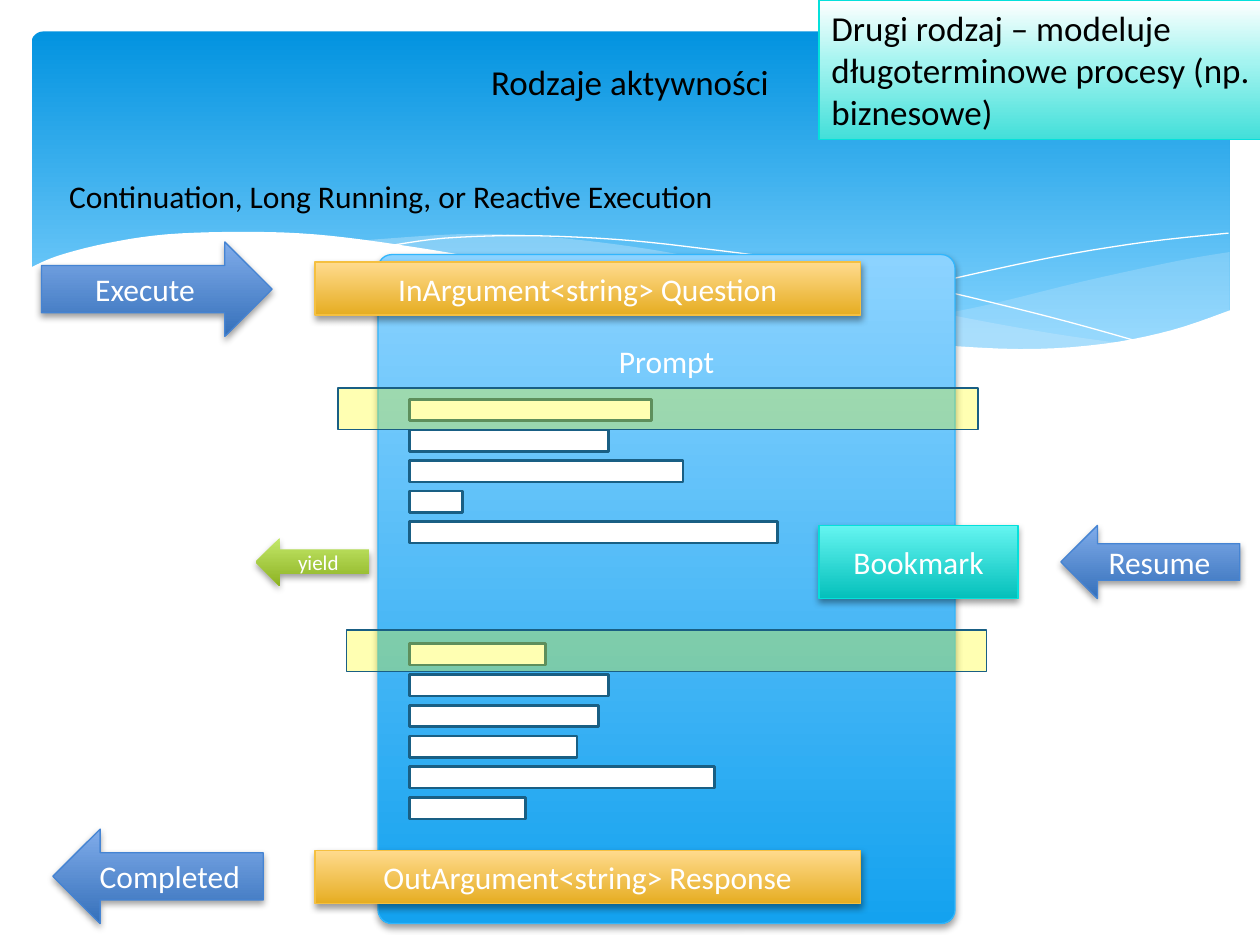
from copy import deepcopy

from lxml import etree
from pptx import Presentation
from pptx import util as u
from pptx.dml.color import RGBColor
from pptx.enum import shapes, text
from pptx.oxml.ns import qn

BLACK = RGBColor(0, 0, 0)
WHITE = RGBColor(255, 255, 255)
YELLOW = RGBColor(255, 255, 0)
NAVY = RGBColor(0x19, 0x5F, 0x84)
PALE = RGBColor(0xC6, 0xE7, 0xFC)


def ramp(*stops):
    return [(share, RGBColor.from_string(color)) for share, color in stops]


SKY = ramp((0, "0293E0"), (0.9, "83D3FE"))
PANEL = ramp((0, "8CD3FF"), (1, "14A2EF")), RGBColor(0x31, 0xB6, 0xFD)
GOLD = ramp((0, "FFDB8E"), (1, "E6AD22")), RGBColor(0xF5, 0xC0, 0x40)
BLUE = ramp((0, "80ACEA"), (1, "3570BA")), RGBColor(0x45, 0x84, 0xD3)
TEAL = ramp((0, "65F5F1"), (1, "04C0BB")), RGBColor(0x05, 0xE0, 0xDB)
GREEN = ramp((0, "C3E86A"), (1, "8DB222")), None
MINT = ramp((0, "FFFFFF"), (0.44, "A5F4F0"), (1, "42DFD9")), RGBColor(0x05, 0xE0, 0xDB)

RECT = shapes.MSO_SHAPE.RECTANGLE
ROUND = shapes.MSO_SHAPE.ROUNDED_RECTANGLE
ARROW = shapes.MSO_SHAPE.RIGHT_ARROW

TITLE = "Rodzaje aktywności"
SUBTITLE = "Continuation, Long Running, or Reactive Execution"
NOTE = "Drugi rodzaj – modeluje długoterminowe procesy (np. biznesowe)"

ARGUMENTS = [("InArgument<string> Question", 2.08), ("OutArgument<string> Response", 6.75)]
CODE_BLOCKS = [
    (3.17, 4.14, [1.92, 1.58, 2.17, 0.42, 2.92]),
    (5.11, 6.33, [1.08, 1.58, 1.5, 1.33, 2.42, 0.92]),
]
HIGHLIGHTS = [(2.68, 3.08), (2.75, 5)]
STEPS = [
    ("Execute", (0.33, 1.92, 1.83, 0.75), ARROW, False, BLUE, 18),
    ("Completed", (0.42, 6.58, 1.67, 0.75), ARROW, True, BLUE, 18),
    ("Bookmark", (6.5, 4.17, 1.58, 0.58), RECT, False, TEAL, 18),
    ("Resume", (8.42, 4.17, 1.42, 0.58), ARROW, True, BLUE, 18),
    ("yield", (2.03, 4.27, 0.9, 0.38), ARROW, True, GREEN, 12),
]

WAVES = [
    ([[(9.76, 2), (9.35, 2.07), (8.61, 2.23), (7.79, 2.43), (7.06, 2.57), (6.61, 2.65)],
      [(6.61, 2.65), (7.05, 2.71), (7.57, 2.76), (8.14, 2.78), (8.63, 2.75),
       (9.13, 2.67), (9.49, 2.57), (9.76, 2.47)]], PALE, 29),
    ([[(8.93, 2.73), (8.37, 2.65), (7.75, 2.54), (7.06, 2.4), (6.29, 2.22), (5.55, 2.05),
       (4.89, 1.94), (4.2, 1.87), (3.61, 1.86), (2.86, 1.91)],
      [(2.86, 1.91), (3.42, 1.99), (4.04, 2.11), (4.91, 2.32), (5.66, 2.48), (6.34, 2.61),
       (6.95, 2.7), (7.61, 2.77), (8.18, 2.79), (8.57, 2.77), (8.93, 2.73)]], PALE, 40),
    ([[(3.09, 1.95), (3.53, 1.89), (4.16, 1.87), (4.89, 1.9), (5.56, 1.97), (6.36, 2.08),
       (7.27, 2.26), (8.31, 2.51), (9.07, 2.72)]], None, 100),
    ([[(6.13, 2.57), (6.72, 2.41), (7.48, 2.23), (8.36, 2.04), (9.1, 1.92), (9.75, 1.85)]],
     None, 100),
    ([[(9.77, 2.46), (9.3, 2.62), (8.75, 2.73), (8.09, 2.77), (7.26, 2.72), (6.47, 2.62),
       (5.55, 2.45), (4.75, 2.27), (3.91, 2.07), (3.15, 1.94), (2.5, 1.86), (1.93, 1.84),
       (1.32, 1.86), (0.85, 1.93), (0.46, 2.03), (0.23, 2.13)],
      [(0.23, 3.29), (9.77, 3.29)]], WHITE, 100),
]


def smooth_points(knots, steps=5):
    if len(knots) < 3:
        return knots
    padded = [knots[0], *knots, knots[-1]]
    points = []
    for a, b, c, d in zip(padded, padded[1:], padded[2:], padded[3:]):
        for t in (i / steps for i in range(steps)):
            points.append(tuple(
                q + t / 2 * (r - p + t * (2 * p - 5 * q + 4 * r - s + t * (3 * (q - r) + s - p)))
                for p, q, r, s in zip(a, b, c, d)))
    return points + [knots[-1]]


def set_alpha(shape, percent):
    color = shape.fill._xPr.find(qn("a:solidFill"))[0]
    etree.SubElement(color, qn("a:alpha"), val=str(percent * 1000))


def paint(shape, fill, line=None, width=0.75):
    shape.shadow.inherit = False
    if isinstance(fill, list):
        shape.fill.gradient()
        shape.fill.gradient_angle = 270
        stop_list = shape._element.spPr.find(".//" + qn("a:gsLst"))
        for _ in fill[2:]:
            stop_list.append(deepcopy(stop_list[0]))
        for stop, (share, color) in zip(shape.fill.gradient_stops, fill):
            stop.position, stop.color.rgb = share, color
    elif fill is None:
        shape.fill.background()
    else:
        shape.fill.solid()
        shape.fill.fore_color.rgb = fill
    if line is None:
        shape.line.fill.background()
    else:
        shape.line.color.rgb = line
        shape.line.width = u.Pt(width)


def cast_shadow(shape):
    effects = shape._element.spPr.find(qn("a:effectLst"))
    outer = etree.SubElement(effects, qn("a:outerShdw"), blurRad=str(u.Pt(4)),
                             dist=str(u.Pt(2)), dir="5400000", rotWithShape="0")
    color = etree.SubElement(outer, qn("a:srgbClr"), val="000000")
    etree.SubElement(color, qn("a:alpha"), val="38000")


def write(shape, words, size, color, align, wrap=True):
    frame = shape.text_frame
    frame.text = words
    frame.word_wrap = wrap
    line = frame.paragraphs[0]
    line.alignment = align
    line.font.name, line.font.size, line.font.color.rgb = "Calibri", u.Pt(size), color
    return frame


def add_block(slide, kind, box, fill, line=None, width=0.75):
    block = slide.shapes.add_shape(kind, *map(u.Inches, box))
    paint(block, fill, line, width)
    return block


def add_wave(slide, curves, fill, alpha):
    points = [(u.Inches(x), u.Inches(y)) for knots in curves for x, y in smooth_points(knots)]
    outline = slide.shapes.build_freeform(*points[0])
    outline.add_line_segments(points[1:], close=fill is not None)
    wave = outline.convert_to_shape()
    paint(wave, fill, None if fill else WHITE, 0)
    if alpha < 100:
        set_alpha(wave, alpha)


def add_label(slide, words, box, kind, style, size=18):
    label = add_block(slide, kind, box, *style)
    cast_shadow(label)
    write(label, words, size, WHITE, text.PP_ALIGN.CENTER)
    return label


def main():
    deck = Presentation()
    deck.slide_width, deck.slide_height = u.Inches(10), u.Inches(7.5)
    slide = deck.slides.add_slide(deck.slide_layouts[5])

    sky = add_block(slide, ROUND, (0.25, 0.25, 9.51, 2.7), SKY)
    sky.adjustments[0] = 0.034
    for wave in WAVES:
        add_wave(slide, *wave)

    title = slide.shapes.title
    title.left, title.top, title.width, title.height = map(u.Inches, (0.5, 0.37, 9, 0.55))
    heading = write(title, TITLE, 20, BLACK, text.PP_ALIGN.CENTER)
    heading.vertical_anchor = text.MSO_ANCHOR.MIDDLE
    slide.shapes._spTree.append(title._element)

    prompt = add_label(slide, "Prompt", (3, 2.02, 4.58, 5.31), ROUND, PANEL)
    prompt.adjustments[0] = 0.024
    prompt.text_frame.vertical_anchor = text.MSO_ANCHOR.TOP
    prompt.text_frame.margin_top = u.Inches(0.66)

    for words, top in ARGUMENTS:
        add_label(slide, words, (2.5, top, 4.33, 0.42), RECT, GOLD)
    for first, last, widths in CODE_BLOCKS:
        pitch = (last - first) / (len(widths) - 1)
        for row, width in enumerate(widths):
            add_block(slide, RECT, (3.25, first + row * pitch, width, 0.17), WHITE, NAVY, 1.5)
    for left, top in HIGHLIGHTS:
        set_alpha(add_block(slide, RECT, (left, top, 5.08, 0.33), YELLOW, NAVY, 1), 30)
    for words, box, kind, flipped, style, size in STEPS:
        step = add_label(slide, words, box, kind, style, size)
        if flipped:
            step._element.spPr.find(qn("a:xfrm")).set("flipH", "1")

    subtitle = slide.shapes.add_textbox(*map(u.Inches, (0.45, 1.36, 5.38, 0.4)))
    write(subtitle, SUBTITLE, 18, BLACK, text.PP_ALIGN.LEFT, wrap=False)
    note = add_block(slide, RECT, (6.5, 0, 3.61, 1.11), *MINT)
    write(note, NOTE, 20, BLACK, text.PP_ALIGN.LEFT).vertical_anchor = text.MSO_ANCHOR.TOP

    deck.save("out.pptx")


if __name__ == "__main__":
    main()
